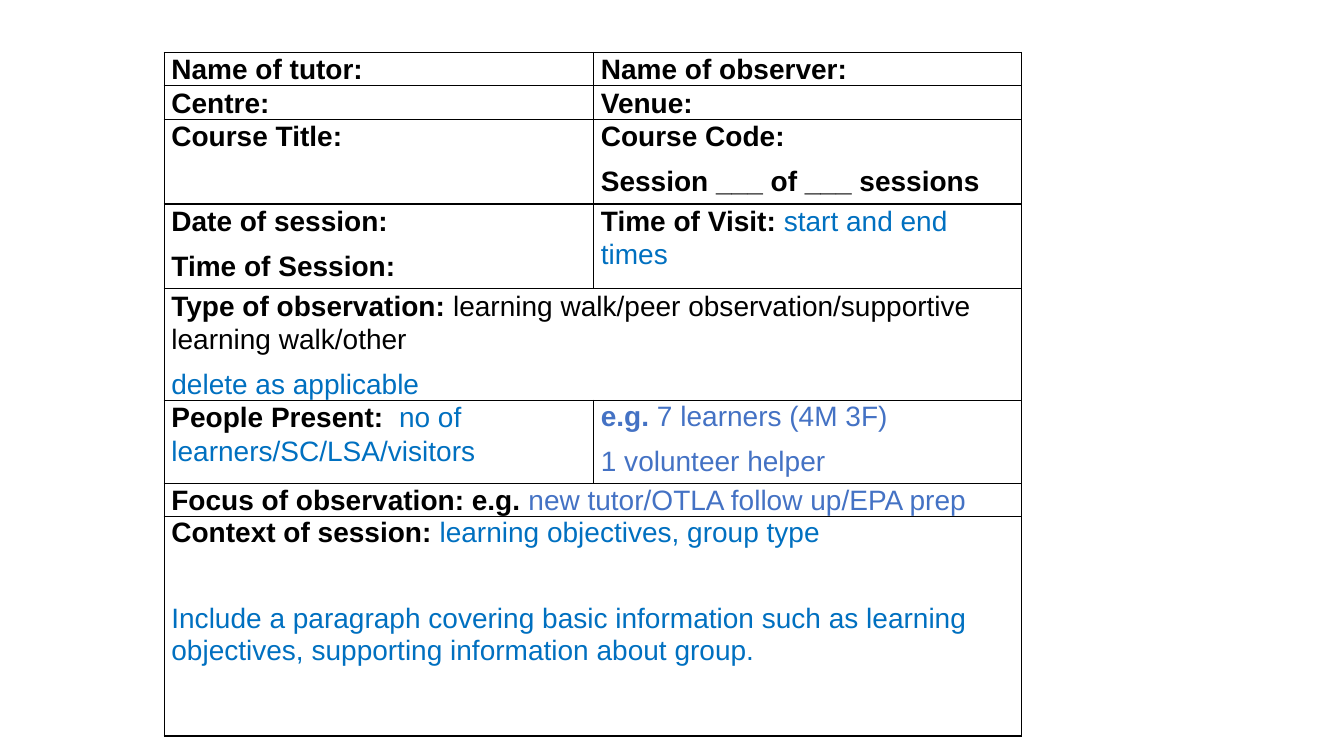
from lxml.etree import SubElement
from pptx import Presentation
from pptx.dml.color import RGBColor
from pptx.oxml import parse_xml
from pptx.oxml.ns import nsdecls
from pptx.util import Inches, Pt

BLACK = RGBColor(0x00, 0x00, 0x00)
BLUE = RGBColor(0x00, 0x70, 0xC0)
SOFT_BLUE = RGBColor(0x44, 0x72, 0xC4)

COLUMN_WIDTHS = [4.26, 4.24]
ROW_HEIGHTS = [0.31, 0.31, 0.84, 0.84, 0.84, 0.83, 0.31, 2.18]
SINGLE, TIGHT = 1.07, 1.04
CONTEXT_GAP = 30


def label(text, color=BLACK):
    """Return a bold run."""
    return text, color, True


def note(text, color=BLUE):
    """Return a regular run."""
    return text, color, False


def para(*runs, spacing=SINGLE, before=0):
    """Return a paragraph made of runs."""
    return runs, spacing, before


FORM_ROWS = [
    [[para(label("Name of tutor:"))], [para(label("Name of observer:"))]],
    [[para(label("Centre:"))], [para(label("Venue:"))]],
    [[para(label("Course Title:"))],
     [para(label("Course Code:")), para(label("Session ___ of ___ sessions"))]],
    [[para(label("Date of session:")), para(label("Time of Session:"))],
     [para(label("Time of Visit: "), note("start and end times"))]],
    [[para(label("Type of observation: "),
           note("learning walk/peer observation/supportive learning walk/other", BLACK)),
      para(note("delete as applicable"))]],
    [[para(label("People Present:  "), note("no of learners/SC/LSA/visitors"))],
     [para(label("e.g. ", SOFT_BLUE), note("7 learners (4M 3F)", SOFT_BLUE), spacing=TIGHT),
      para(note("1 volunteer helper", SOFT_BLUE))]],
    [[para(label("Focus of observation: e.g. "),
           note("new tutor/OTLA follow up/EPA prep", SOFT_BLUE), spacing=TIGHT)]],
    [[para(label("Context of session: "), note("learning objectives, group type"),
           spacing=TIGHT),
      para(note("Include a paragraph covering basic information such as learning "
                "objectives, supporting information about group."),
           spacing=TIGHT, before=CONTEXT_GAP)]],
]


def style_cell(cell):
    """Clear the fill, set the margins and draw thin black borders."""
    cell.fill.background()
    cell.margin_left = cell.margin_right = Inches(0.07)
    cell.margin_top = cell.margin_bottom = 0
    properties = cell._tc.get_or_add_tcPr()
    for position, side in enumerate("LRTB"):
        border = parse_xml(
            f'<a:ln{side} {nsdecls("a")} w="{Pt(1)}"><a:solidFill>'
            f'<a:srgbClr val="{BLACK}"/></a:solidFill></a:ln{side}>')
        properties.insert(position, border)


def write_cell(cell, paragraphs):
    """Fill a cell with its paragraphs."""
    frame = cell.text_frame
    for index, (runs, spacing, before) in enumerate(paragraphs):
        paragraph = frame.add_paragraph() if index else frame.paragraphs[0]
        paragraph.line_spacing = spacing
        paragraph.space_after = Pt(8)
        if before:
            paragraph.space_before = Pt(before)
        paragraph.font.name = "Arial"
        paragraph.font.size = Pt(20)
        for text, color, bold in runs:
            run = paragraph.add_run()
            run.text = text
            run.font.color.rgb = color
            run.font.bold = bold


def add_observation_form(slide, left, top):
    """Draw the observation form with its top left corner at the given place."""
    form = slide.shapes.add_table(
        len(ROW_HEIGHTS), len(COLUMN_WIDTHS), Inches(left), Inches(top),
        Inches(sum(COLUMN_WIDTHS)), Inches(sum(ROW_HEIGHTS))).table
    form.first_row = form.horz_banding = False
    for column, width in zip(form.columns, COLUMN_WIDTHS):
        column.width = Inches(width)
    for index, (height, entries) in enumerate(zip(ROW_HEIGHTS, FORM_ROWS)):
        form.rows[index].height = Inches(height)
        for cell in form.rows[index].cells:
            style_cell(cell)
        if len(entries) == 1:
            form.cell(index, 0).merge(form.cell(index, 1))
        for column, paragraphs in enumerate(entries):
            write_cell(form.cell(index, column), paragraphs)


def main():
    """Build the slide and save it."""
    deck = Presentation()
    deck.slide_width, deck.slide_height = Inches(13.33), Inches(7.5)
    slide = deck.slides.add_slide(deck.slide_layouts[6])
    add_observation_form(slide, 1.63, 0.52)
    deck.save("out.pptx")


if __name__ == "__main__":
    main()
